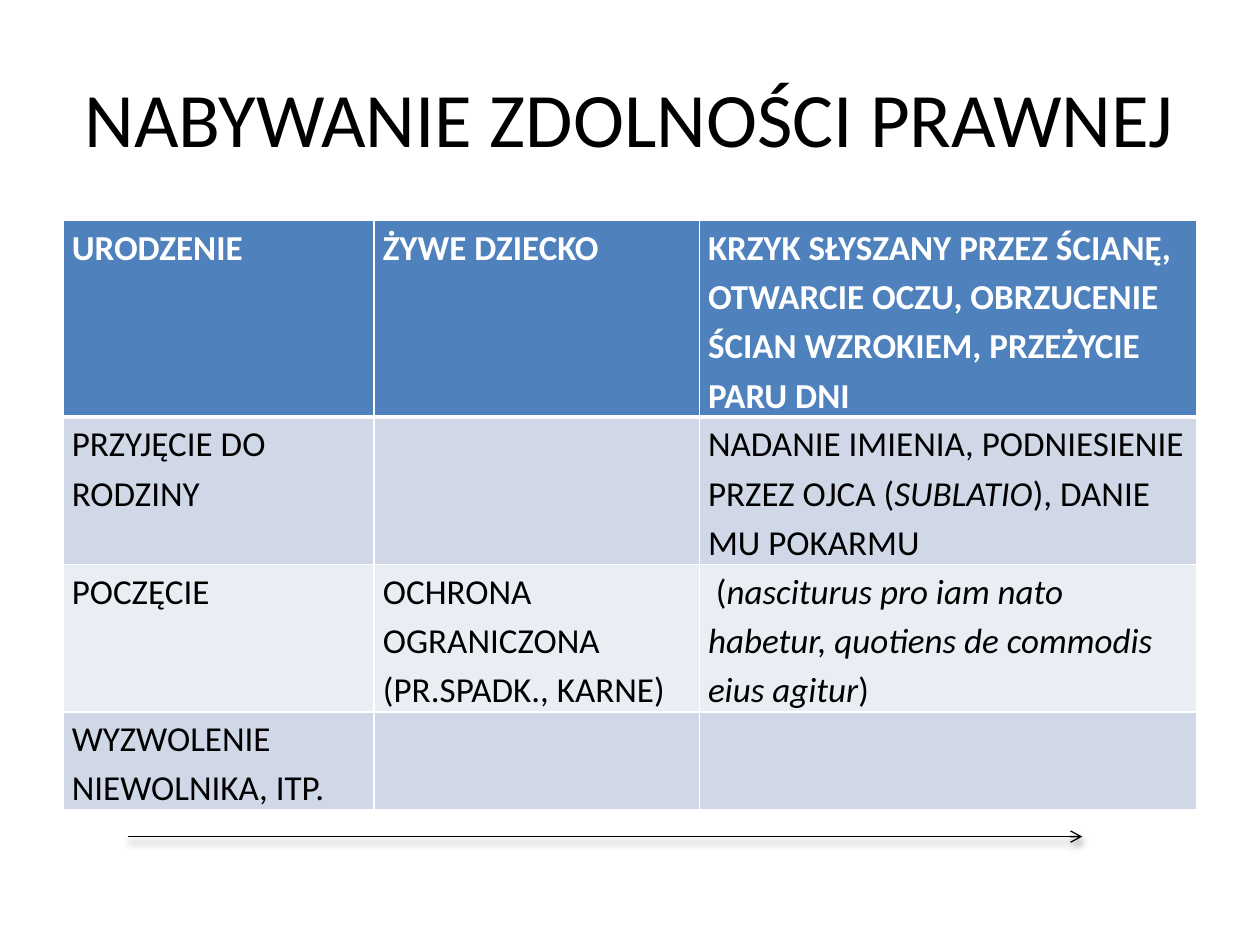
from lxml import etree
from pptx import Presentation
from pptx.dml.color import RGBColor
from pptx.enum import shapes, text
from pptx.oxml import ns, parse_xml
from pptx.util import Inches, Pt

FONT = "Calibri"
BLACK, WHITE = "000000", "FFFFFF"
ROW_FILLS = ["4F81BD", "D0D8E8", "E9EDF4", "D0D8E8"]
COLUMN_WIDTHS = [2.47, 2.58, 3.95]
ROW_HEIGHTS = [1.56, 1.17, 1.17, 0.78]

# Each cell is a list of runs; every second run is italic.
ROWS = [
    [["URODZENIE"], ["ŻYWE DZIECKO"],
     ["KRZYK SŁYSZANY PRZEZ ŚCIANĘ, OTWARCIE OCZU, "
      "OBRZUCENIE ŚCIAN WZROKIEM, PRZEŻYCIE PARU DNI"]],
    [["PRZYJĘCIE DO RODZINY"], [],
     ["NADANIE IMIENIA, PODNIESIENIE PRZEZ OJCA (", "SUBLATIO",
      "), DANIE MU POKARMU"]],
    [["POCZĘCIE"], ["OCHRONA OGRANICZONA (PR.SPADK., KARNE)"],
     [" (", "nasciturus pro iam nato habetur, quotiens de commodis eius agitur",
      ")"]],
    [["WYZWOLENIE NIEWOLNIKA, ITP."], [], []],
]


def rgb(color):
    return RGBColor.from_string(color)


def style_font(font, size, color, bold=False, italic=False):
    font.name = FONT
    font.size = Pt(size)
    font.bold = bold
    font.italic = italic
    font.color.rgb = rgb(color)


def add_title(slide, wording):
    title = slide.shapes.add_textbox(Inches(0.5), Inches(0.3), Inches(9), Inches(1.25))
    frame = title.text_frame
    frame.word_wrap = True
    frame.vertical_anchor = text.MSO_ANCHOR.MIDDLE
    frame.text = wording
    paragraph = frame.paragraphs[0]
    paragraph.alignment = text.PP_ALIGN.CENTER
    style_font(paragraph.runs[0].font, 44, BLACK)


def set_borders(cell, bottom_width):
    """Draw white borders, placed before the fill as the schema requires."""
    properties = cell._tc.get_or_add_tcPr()
    widths = {"L": 1, "R": 1, "T": 1, "B": bottom_width}
    for index, (side, width) in enumerate(widths.items()):
        border = etree.Element(ns.qn(f"a:ln{side}"), w=str(Pt(width)))
        fill = etree.SubElement(border, ns.qn("a:solidFill"))
        etree.SubElement(fill, ns.qn("a:srgbClr"), val=WHITE)
        properties.insert(index, border)


def fill_cell(cell, runs, fill, is_header):
    cell.fill.solid()
    cell.fill.fore_color.rgb = rgb(fill)
    set_borders(cell, 3 if is_header else 1)
    cell.margin_left = cell.margin_right = Inches(0.07)
    cell.margin_top = cell.margin_bottom = 0
    paragraph = cell.text_frame.paragraphs[0]
    paragraph.line_spacing = 1.15
    for index, wording in enumerate(runs):
        run = paragraph.add_run()
        run.text = wording
        style_font(run.font, 20, WHITE if is_header else BLACK,
                   bold=is_header, italic=index % 2 == 1)


def add_capacity_table(slide):
    table = slide.shapes.add_table(
        len(ROWS), len(COLUMN_WIDTHS), Inches(0.5), Inches(1.75),
        Inches(sum(COLUMN_WIDTHS)), Inches(sum(ROW_HEIGHTS))).table
    for column, width in zip(table.columns, COLUMN_WIDTHS):
        column.width = Inches(width)
    for row, height in zip(table.rows, ROW_HEIGHTS):
        row.height = Inches(height)
    for r, (contents, fill) in enumerate(zip(ROWS, ROW_FILLS)):
        for c, runs in enumerate(contents):
            fill_cell(table.cell(r, c), runs, fill, is_header=r == 0)


def add_arrow(slide, left, right, y):
    arrow = slide.shapes.add_connector(
        shapes.MSO_CONNECTOR.STRAIGHT, Inches(left), Inches(y), Inches(right), Inches(y))
    arrow.line.color.rgb = rgb(BLACK)
    arrow.line.width = Pt(0.75)
    etree.SubElement(arrow.line._get_or_add_ln(), ns.qn("a:tailEnd"), type="arrow")
    arrow._element.spPr.append(parse_xml(
        f'<a:effectLst {ns.nsdecls("a")}>'
        f'<a:outerShdw blurRad="{Pt(4)}" dist="{Pt(3)}" dir="5400000" rotWithShape="0">'
        f'<a:srgbClr val="{BLACK}"><a:alpha val="40000"/></a:srgbClr>'
        '</a:outerShdw></a:effectLst>'))


def main():
    presentation = Presentation()
    presentation.slide_width = Inches(10)
    presentation.slide_height = Inches(7.5)
    slide = presentation.slides.add_slide(presentation.slide_layouts[6])
    add_title(slide, "NABYWANIE ZDOLNOŚCI PRAWNEJ")
    add_capacity_table(slide)
    add_arrow(slide, 1.02, 8.59, 6.64)
    presentation.save("out.pptx")


if __name__ == "__main__":
    main()
